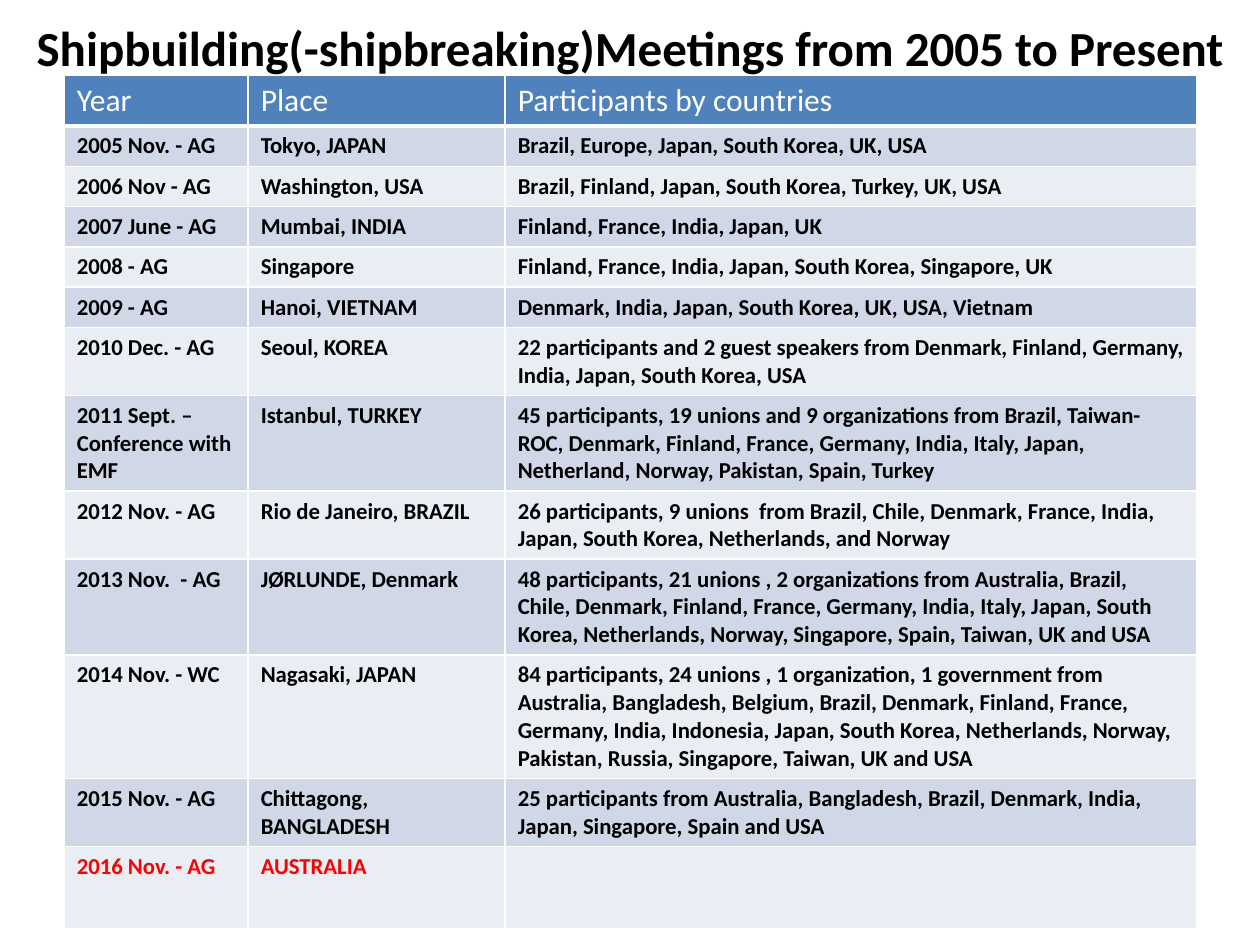
"""Build a slide listing the shipbuilding meetings by year, place and participants."""
import pptx
import pptx.util
import pptx.dml.color
import pptx.enum.text
import pptx.oxml
import pptx.oxml.ns

Inches, Pt = pptx.util.Inches, pptx.util.Pt
RGBColor = pptx.dml.color.RGBColor

WHITE = RGBColor(0xFF, 0xFF, 0xFF)
BLACK = RGBColor(0, 0, 0)
RED = RGBColor(0xFF, 0, 0)
HEADER_BLUE = RGBColor(0x4F, 0x81, 0xBD)
BANDS = (RGBColor(0xE9, 0xED, 0xF4), RGBColor(0xD0, 0xD8, 0xE8))
FONT = "Calibri"

TITLE = "Shipbuilding(-shipbreaking)Meetings from 2005 to Present"
HEADINGS = ("Year", "Place", "Participants by countries")
MEETINGS = [
    ("2005 Nov. - AG", "Tokyo, JAPAN", "Brazil, Europe, Japan, South Korea, UK, USA"),
    ("2006 Nov - AG", "Washington, USA", "Brazil, Finland, Japan, South Korea, Turkey, UK, USA"),
    ("2007 June - AG", "Mumbai, INDIA", "Finland, France, India, Japan, UK"),
    ("2008 - AG", "Singapore", "Finland, France, India, Japan, South Korea, Singapore, UK"),
    ("2009 - AG", "Hanoi, VIETNAM", "Denmark, India, Japan, South Korea, UK, USA, Vietnam"),
    ("2010 Dec. - AG", "Seoul, KOREA",
     "22 participants and 2 guest speakers from Denmark, Finland, Germany, "
     "India, Japan, South Korea, USA"),
    ("2011 Sept. – Conference with EMF", "Istanbul, TURKEY",
     "45 participants, 19 unions and 9 organizations from Brazil, Taiwan-ROC, Denmark, "
     "Finland, France, Germany, India, Italy, Japan, Netherland, Norway, Pakistan, "
     "Spain, Turkey"),
    ("2012 Nov. - AG", "Rio de Janeiro, BRAZIL",
     "26 participants, 9 unions  from Brazil, Chile, Denmark, France, India, Japan, "
     "South Korea, Netherlands, and Norway"),
    ("2013 Nov.  - AG", "JØRLUNDE, Denmark",
     "48 participants, 21 unions , 2 organizations from Australia, Brazil, Chile, "
     "Denmark, Finland, France, Germany, India, Italy, Japan, South Korea, Netherlands, "
     "Norway, Singapore, Spain, Taiwan, UK and USA"),
    ("2014 Nov. - WC", "Nagasaki, JAPAN",
     "84 participants, 24 unions , 1 organization, 1 government from Australia, "
     "Bangladesh, Belgium, Brazil, Denmark, Finland, France, Germany, India, Indonesia, "
     "Japan, South Korea, Netherlands, Norway, Pakistan, Russia, Singapore, Taiwan, "
     "UK and USA"),
    ("2015 Nov. - AG", "Chittagong, BANGLADESH",
     "25 participants from Australia, Bangladesh, Brazil, Denmark, India, Japan, "
     "Singapore, Spain and USA"),
    ("2016 Nov. - AG", "AUSTRALIA", ""),
]
LINES_PER_MEETING = (1, 1, 1, 1, 1, 2, 3, 2, 3, 4, 2)
COLUMN_WIDTHS = (1.46, 2.04, 5.49)
HEADER_HEIGHT, LINE_HEIGHT, ROW_PADDING, UPCOMING_HEIGHT = 0.4, 0.22, 0.1, 0.65
ROW_HEIGHTS = [
    HEADER_HEIGHT,
    *(ROW_PADDING + LINE_HEIGHT * lines for lines in LINES_PER_MEETING),
    UPCOMING_HEIGHT,
]


def style_text(paragraph, size, color, bold):
    for run in paragraph.runs:
        run.font.name = FONT
        run.font.size = Pt(size)
        run.font.bold = bold
        run.font.color.rgb = color


def add_borders(cell, bottom_width):
    widths = {"lnL": 1, "lnR": 1, "lnT": 1, "lnB": bottom_width}
    for side, width in widths.items():
        cell._tc.get_or_add_tcPr().append(pptx.oxml.parse_xml(
            f'<a:{side} {pptx.oxml.ns.nsdecls("a")} w="{Pt(width)}">'
            f'<a:solidFill><a:srgbClr val="{WHITE}"/></a:solidFill></a:{side}>'))


def add_title(slide, width):
    title = slide.shapes.add_textbox(0, Inches(-0.25), width, Inches(1.25))
    frame = title.text_frame
    frame.word_wrap = True
    frame.vertical_anchor = pptx.enum.text.MSO_ANCHOR.MIDDLE
    frame.text = TITLE
    frame.paragraphs[0].alignment = pptx.enum.text.PP_ALIGN.CENTER
    style_text(frame.paragraphs[0], 28, BLACK, True)


def add_meetings(slide):
    rows = [HEADINGS, *MEETINGS]
    meetings = slide.shapes.add_table(
        len(rows), len(HEADINGS), Inches(0.51), Inches(0.6),
        Inches(sum(COLUMN_WIDTHS)), Inches(sum(ROW_HEIGHTS))).table
    for column, width in zip(meetings.columns, COLUMN_WIDTHS):
        column.width = Inches(width)
    for row, height in zip(meetings.rows, ROW_HEIGHTS):
        row.height = Inches(height)

    for row_number, entries in enumerate(rows):
        is_header = row_number == 0
        if is_header:
            size, color, fill = 18, WHITE, HEADER_BLUE
        else:
            size, fill = 13, BANDS[row_number % 2]
            color = RED if row_number == len(MEETINGS) else BLACK
        for column_number, entry in enumerate(entries):
            cell = meetings.cell(row_number, column_number)
            add_borders(cell, 3 if is_header else 1)
            cell.fill.solid()
            cell.fill.fore_color.rgb = fill
            cell.text_frame.text = entry
            style_text(cell.text_frame.paragraphs[0], size, color, not is_header)


def main():
    deck = pptx.Presentation()
    deck.slide_width, deck.slide_height = Inches(10), Inches(7.5)
    slide = deck.slides.add_slide(deck.slide_layouts[6])
    add_title(slide, deck.slide_width)
    add_meetings(slide)
    deck.save("out.pptx")


if __name__ == "__main__":
    main()
